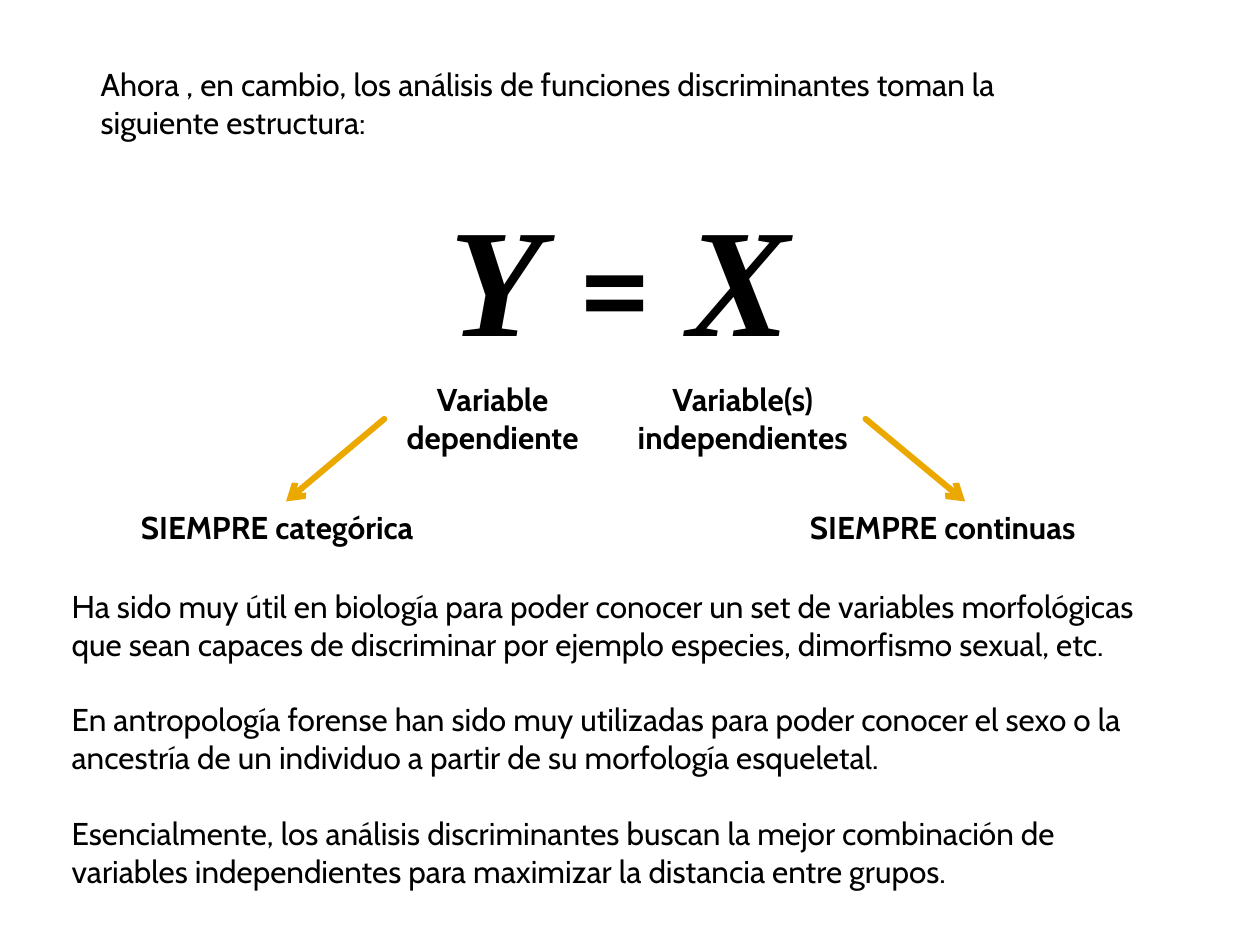
import pptx
import pptx.dml.color
import pptx.enum.shapes
import pptx.enum.text
import pptx.oxml.ns
import pptx.util
from lxml import etree

Inches = pptx.util.Inches
Pt = pptx.util.Pt
ALIGN = pptx.enum.text.PP_ALIGN
BLACK = pptx.dml.color.RGBColor(0x00, 0x00, 0x00)
GOLD = pptx.dml.color.RGBColor(0xEB, 0xA9, 0x00)
SANS, SERIF = "Cabin", "Times New Roman"
TOP, LEFT, RIGHT = 0, 1, 3

INTRO = ("Ahora , en cambio, los análisis de funciones discriminantes toman "
         "la siguiente estructura:")
NOTES = [
    "Ha sido muy útil en biología para poder conocer un set de variables "
    "morfológicas que sean capaces de discriminar por ejemplo especies, "
    "dimorfismo sexual, etc.",
    "En antropología forense han sido muy utilizadas para poder conocer el "
    "sexo o la ancestría de un individuo a partir de su morfología esqueletal.",
    "Esencialmente, los análisis discriminantes buscan la mejor combinación de "
    "variables independientes para maximizar la distancia entre grupos.",
]


def add_run(para, text, size=18, font=SANS, bold=False, italic=False):
    run = para.add_run()
    run.text = text
    run.font.name = font
    run.font.size = Pt(size)
    run.font.bold = bold
    run.font.italic = italic
    run.font.color.rgb = BLACK


def add_box(slide, x, y, w, h):
    box = slide.shapes.add_textbox(Inches(x), Inches(y), Inches(w), Inches(h))
    box.text_frame.word_wrap = True
    return box


def add_text(slide, x, y, w, h, texts, bold=False, align=ALIGN.LEFT, gap=0):
    """Add a text box with one paragraph per text, gap points apart."""
    box = add_box(slide, x, y, w, h)
    frame = box.text_frame
    for i, text in enumerate(texts):
        para = frame.add_paragraph() if i else frame.paragraphs[0]
        para.alignment = align
        if i:
            para.space_before = Pt(gap)
        add_run(para, text, bold=bold)
    return box


def add_arrow(slide, start, side, end):
    """Join one side of the start box to the top of the end box."""
    line = slide.shapes.add_connector(
        pptx.enum.shapes.MSO_CONNECTOR.STRAIGHT, 0, 0, 0, 0)
    line.begin_connect(start, side)
    line.end_connect(end, TOP)
    line.line.color.rgb = GOLD
    line.line.width = Pt(3.5)
    qn = pptx.oxml.ns.qn
    props = line.line._get_or_add_ln()
    props.set("cap", "rnd")
    etree.SubElement(props, qn("a:tailEnd"), type="arrow")
    etree.SubElement(line._element.spPr, qn("a:effectLst"))


def add_model(slide, x, y):
    """Draw the equation, its variables and the kind of each one."""
    para = add_box(slide, x + 2.26, y, 3.28, 1.58).text_frame.paragraphs[0]
    para.alignment = ALIGN.CENTER
    add_run(para, "Y ", 88, SERIF, True, True)
    add_run(para, "= ", 88)
    add_run(para, "X", 88, SERIF, True, True)

    parts = [
        ("Variable dependiente", 2.03, 1.72, LEFT,
         "SIEMPRE categórica", 0, 2.5),
        ("Variable(s) independientes", 3.9, 1.95, RIGHT,
         "SIEMPRE continuas", 5.31, 2.66),
    ]
    for name, left, width, side, kind, kind_left, kind_width in parts:
        start = add_text(slide, x + left, y + 1.57, width, 0.71, [name],
                         bold=True, align=ALIGN.CENTER)
        end = add_text(slide, x + kind_left, y + 2.58, kind_width, 0.4,
                       [kind], bold=True)
        add_arrow(slide, start, side, end)


def main():
    deck = pptx.Presentation()
    deck.slide_width, deck.slide_height = Inches(10), Inches(7.5)
    slide = deck.slides.add_slide(deck.slide_layouts[6])
    add_text(slide, 0.7, 0.47, 8.28, 0.71, [INTRO])
    add_model(slide, 1.02, 1.4)
    add_text(slide, 0.47, 4.61, 8.91, 2.52, NOTES, gap=21.6)
    deck.save("out.pptx")


if __name__ == "__main__":
    main()
